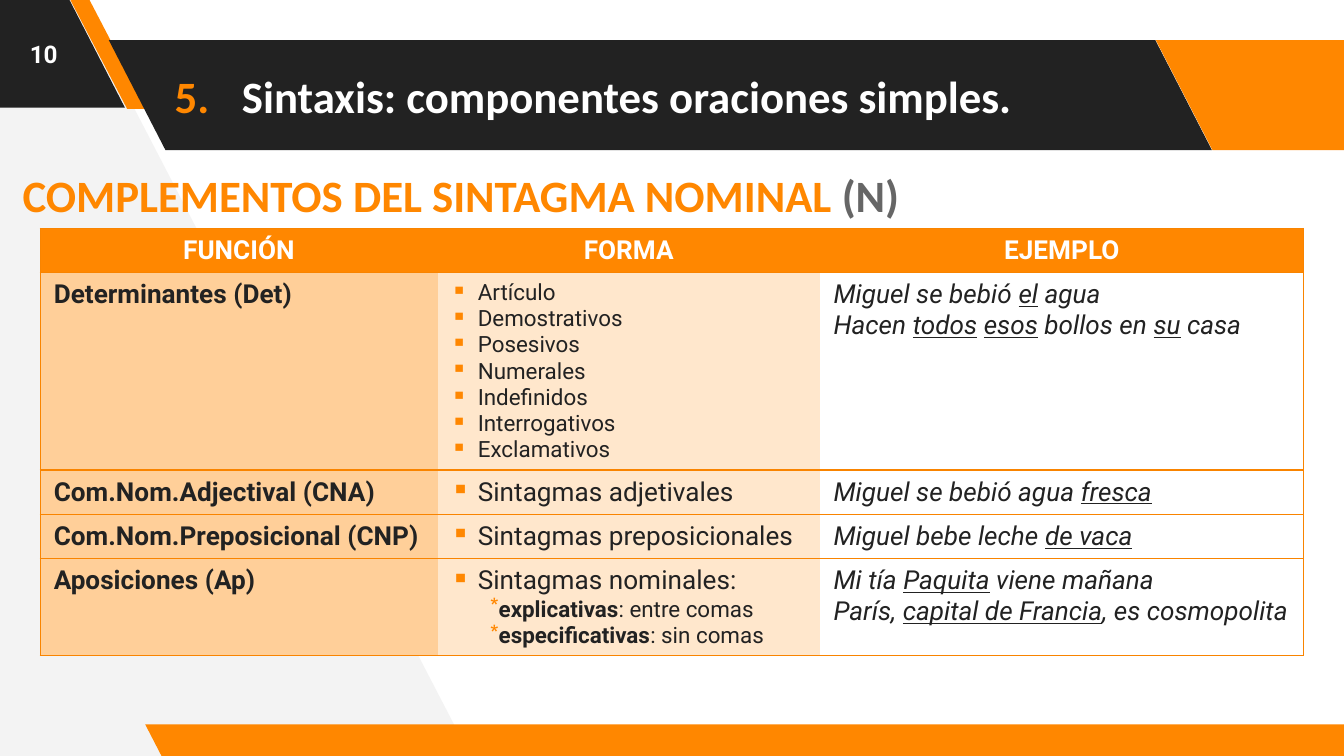
"""Build the slide on the complements of the Spanish noun phrase."""
from lxml.etree import SubElement, Element
from pptx import Presentation
from pptx.dml.color import RGBColor
from pptx.enum.shapes import MSO_SHAPE as Preset
from pptx.enum.text import MSO_ANCHOR as Anchor, MSO_AUTO_SIZE as AutoSize, PP_ALIGN as Align
from pptx.oxml.ns import qn
from pptx.util import Pt

COLORS = {
    "orange": "FF8700", "border": "F98400", "peach": "FFCF99", "cream": "FFE7CC",
    "dark": "222222", "gray": "666666", "pale": "F3F3F3", "white": "FFFFFF",
}


def add_run(paragraph, text, size, color, font="Roboto", bold=False, italic=False, underline=False):
    run = paragraph.add_run()
    run.text = text
    run.font.name, run.font.size = font, Pt(size)
    run.font.bold, run.font.italic, run.font.underline = bold, italic, underline
    run.font.color.rgb = RGBColor.from_string(COLORS[color])


def add_bullet(paragraph, margin, indent, tag, **marker):
    properties = paragraph._p.get_or_add_pPr()
    properties.set("marL", str(Pt(margin)))
    properties.set("indent", str(Pt(indent)))
    bullet_color = SubElement(properties, qn("a:buClr"))
    SubElement(bullet_color, qn("a:srgbClr"), val=COLORS["orange"])
    SubElement(properties, qn(tag), **marker)


prs = Presentation()
prs.slide_width, prs.slide_height = Pt(720), Pt(405)
slide = prs.slides.add_slide(prs.slide_layouts[5])
shapes = slide.shapes

outline = shapes.build_freeform(Pt(252), Pt(405))
outline.add_line_segments([(Pt(40.3), Pt(-2.9)), (Pt(-4.3), Pt(-2.9)), (Pt(-1.4), Pt(407.5))])
backdrop = outline.convert_to_shape()
backdrop.shadow.inherit = False
backdrop.fill.solid()
backdrop.fill.fore_color.rgb = RGBColor.from_string(COLORS["pale"])
backdrop.line.fill.background()

BANDS = [
    (-71.3, -1.4, 138.2, 59, 0.515, "dark"),
    (37.4, -0.7, 41, 59, 0.75, "orange"),
    (58.3, 21.5, 591, 59, 0.515, "dark"),
    (619.2, 21.5, 138.2, 59, 0.515, "orange"),
    (77.8, 388, 659, 18, 0.515, "orange"),
]
for left, top, width, height, slant, color in BANDS:
    band = shapes.add_shape(Preset.PARALLELOGRAM, Pt(left), Pt(top), Pt(width), Pt(height))
    band.adjustments[0] = slant
    band._element.spPr.find(qn("a:xfrm")).set("flipH", "1")
    band.shadow.inherit = False
    band.fill.solid()
    band.fill.fore_color.rgb = RGBColor.from_string(COLORS[color])
    band.line.fill.background()

heading = shapes.title
shapes._spTree.append(heading._element)
page_number = shapes.add_textbox(0, 0, 0, 0)
subtitle = shapes.add_textbox(0, 0, 0, 0)
TEXTS = [
    (heading, (86.4, 21.5, 596, 59), Align.LEFT,
     [("Sintaxis: componentes oraciones simples.", 24, "white", "Calibri")]),
    (page_number, (0, 0, 46.8, 57.6), Align.CENTER, [("10", 13, "white", "Roboto")]),
    (subtitle, (5, 80.9, 655, 46.8), Align.LEFT,
     [("COMPLEMENTOS DEL SINTAGMA NOMINAL ", 24, "orange", "Calibri"),
      ("(N)", 24, "gray", "Calibri")]),
]
for holder, box, align, runs in TEXTS:
    holder.left, holder.top, holder.width, holder.height = map(Pt, box)
    frame = holder.text_frame
    frame.word_wrap, frame.auto_size = True, AutoSize.NONE
    frame.vertical_anchor = Anchor.MIDDLE
    frame.margin_left = frame.margin_right = frame.margin_top = frame.margin_bottom = Pt(7.2)
    frame.paragraphs[0].alignment = align
    for text, size, color, font in runs:
        add_run(frame.paragraphs[0], text, size, color, font, bold=True)
add_bullet(heading.text_frame.paragraphs[0], 36, -36, "a:buAutoNum", type="arabicPeriod", startAt="5")

DETERMINERS = ["Artículo", "Demostrativos", "Posesivos", "Numerales", "Indefinidos",
               "Interrogativos", "Exclamativos"]
ROWS = [
    [[("FUNCIÓN", 14)], [("FORMA", 14)], [("EJEMPLO", 14)]],
    [[("Determinantes (Det)", 14)], [(name, 12) for name in DETERMINERS],
     [("Miguel se bebió |el| agua", 14), ("Hacen |todos| |esos| bollos en |su| casa", 14)]],
    [[("Com.Nom.Adjectival (CNA)", 14)], [("Sintagmas adjetivales", 14)],
     [("Miguel se bebió agua |fresca|", 14)]],
    [[("Com.Nom.Preposicional (CNP)", 14)], [("Sintagmas preposicionales", 14)],
     [("Miguel bebe leche |de vaca|", 14)]],
    [[("Aposiciones (Ap)", 14)],
     [("Sintagmas nominales:", 14), ("|explicativas|: entre comas", 12),
      ("|especificativas|: sin comas", 12)],
     [("Mi tía |Paquita| viene mañana", 14),
      ("París, |capital de Francia|, es cosmopolita", 14)]],
]
WIDTHS = [212.8, 205, 259]
HEIGHTS = [23.8, 105.6, 23.8, 23.8, 52]
COLUMN_FILLS = ["peach", "cream", None]

complements = shapes.add_table(5, 3, Pt(21.6), Pt(122.4), Pt(sum(WIDTHS)), Pt(sum(HEIGHTS))).table
for column, width in zip(complements.columns, WIDTHS):
    column.width = Pt(width)
for row, height in zip(complements.rows, HEIGHTS):
    row.height = Pt(height)

for r, row in enumerate(ROWS):
    for c, lines in enumerate(row):
        cell = complements.cell(r, c)
        header = r == 0
        fill = "orange" if header else COLUMN_FILLS[c]
        if fill:
            cell.fill.solid()
            cell.fill.fore_color.rgb = RGBColor.from_string(COLORS[fill])
        else:
            cell.fill.background()

        sides = {"a:lnL": c == 0, "a:lnR": c == 2, "a:lnT": True, "a:lnB": True}
        for position, (side, visible) in enumerate(sides.items()):
            border = Element(qn(side), w=str(Pt(0.75)))
            if visible:
                stroke = SubElement(border, qn("a:solidFill"))
                SubElement(stroke, qn("a:srgbClr"), val=COLORS["border"])
            else:
                SubElement(border, qn("a:noFill"))
            cell._tc.get_or_add_tcPr().insert(position, border)

        for i, (line, size) in enumerate(lines):
            frame = cell.text_frame
            paragraph = frame.paragraphs[0] if i == 0 else frame.add_paragraph()
            paragraph.alignment = Align.CENTER if header else Align.LEFT
            if c == 1 and not header:
                if line.startswith("|"):
                    paragraph.level = 1
                    add_bullet(paragraph, 22.3, -1.4, "a:buChar", char="*")
                else:
                    add_bullet(paragraph, 14.4, -14.4, "a:buChar", char="▪")
            for part, text in enumerate(line.split("|")):
                if text:
                    marked = part % 2 == 1
                    add_run(paragraph, text, size, "white" if header else "dark",
                            bold=header or c == 0 or (c == 1 and marked),
                            italic=c == 2 and not header, underline=c == 2 and marked)

prs.save("out.pptx")
